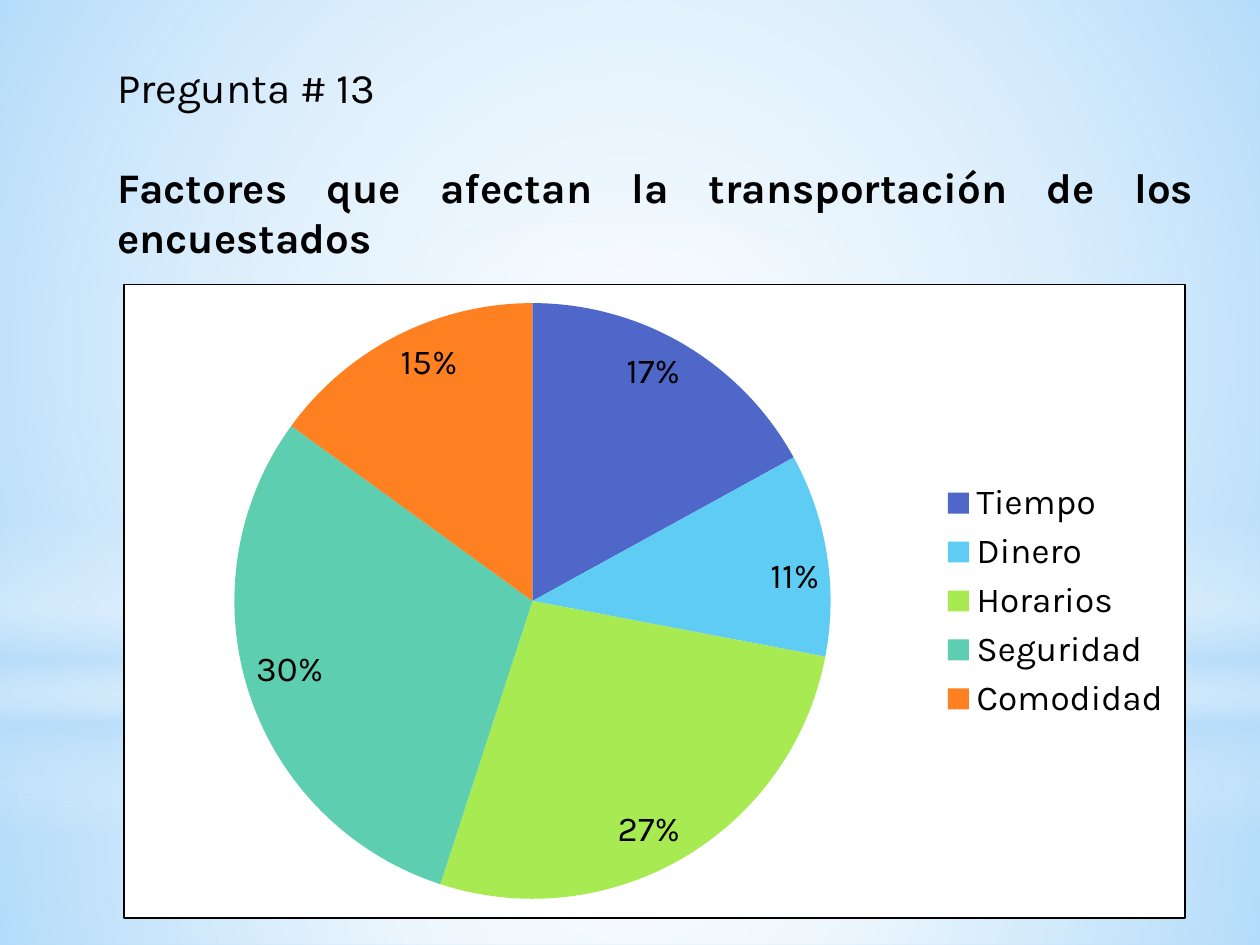
from pptx import Presentation
from pptx.chart.data import CategoryChartData
from pptx.dml.color import RGBColor
from pptx.enum.chart import XL_CHART_TYPE, XL_LABEL_POSITION, XL_LEGEND_POSITION
from pptx.enum.shapes import MSO_SHAPE
from pptx.enum.text import MSO_ANCHOR, PP_ALIGN
from pptx.oxml import parse_xml
from pptx.oxml.ns import nsdecls, qn
from pptx.util import Inches, Pt

PIE = XL_CHART_TYPE.PIE
RIGHT = XL_LEGEND_POSITION.RIGHT
INSIDE = XL_LABEL_POSITION.INSIDE_END
RECT, OVAL = MSO_SHAPE.RECTANGLE, MSO_SHAPE.OVAL
TOP, JUSTIFY = MSO_ANCHOR.TOP, PP_ALIGN.JUSTIFY

FONT, INK, PAPER, SKY = "Karla", "000000", "FFFFFF", "B4DCFA"
HEAD = [
    ("Pregunta # 13", False, 28),
    ("Factores que afectan la transportación de los encuestados", True, 0),
]
DATA = [
    ("Tiempo", 17, "4E67C8"),
    ("Dinero", 11, "5ECCF3"),
    ("Horarios", 27, "A7EA52"),
    ("Seguridad", 30, "5DCEAF"),
    ("Comodidad", 15, "FF8021"),
]
ROUND = ('<a:path path="circle"><a:fillToRect l="50000" t="50000" '
         'r="50000" b="50000"/></a:path>')
DOWN = '<a:lin ang="5400000" scaled="0"/>'
GLOWS = [
    (RECT, (0, 5.58, 10, 1.92), ROUND,
     [(0, PAPER, 91), (37, PAPER, 76), (100, SKY, 79)]),
    (RECT, (0, 0, 10, 5.58), ROUND,
     [(0, PAPER, 89), (48, PAPER, 62), (100, SKY, 79)]),
    (RECT, (0, 4.12, 10, 2.5), DOWN,
     [(0, PAPER, 0), (29, PAPER, 30), (45, SKY, 40),
      (55, PAPER, 26), (65, SKY, 60), (100, PAPER, 0)]),
    (OVAL, (0, 1.75, 10, 5.58), ROUND, [(0, PAPER, 100), (56, PAPER, 0)]),
]
CHART = (0.98, 2.25, 8.43, 5.04)
PLOT = {"x": 0.1, "y": 0.03, "w": 0.57, "h": 0.94}
TITLE = {"left": 0.83, "top": 0.44, "width": 8.74, "height": 1.72}


def paint(fill, color):
    fill.solid()
    fill.fore_color.rgb = RGBColor.from_string(color)


def style(font, size, bold=False):
    for key, val in {"name": FONT, "size": Pt(size), "bold": bold}.items():
        setattr(font, key, val)
    font.color.rgb = RGBColor.from_string(INK)


def add_glow(slide, kind, box, way, stops):
    shape = slide.shapes.add_shape(kind, *map(Inches, box))
    shape.shadow.inherit = False
    shape.line.fill.background()
    shape.fill.background()
    marks = "".join(
        f'<a:gs pos="{pos * 1000}"><a:srgbClr val="{color}">'
        f'<a:alpha val="{alpha * 1000}"/></a:srgbClr></a:gs>'
        for pos, color, alpha in stops)
    grad = parse_xml(f'<a:gradFill {nsdecls("a")} rotWithShape="1">'
                     f'<a:gsLst>{marks}</a:gsLst>{way}</a:gradFill>')
    props = shape._element.spPr
    props.replace(props.find(qn("a:noFill")), grad)


def frame(chart):
    root = chart._chartSpace
    root.find(qn("c:chart")).addnext(parse_xml(
        f'<c:spPr {nsdecls("c", "a")}>'
        f'<a:solidFill><a:srgbClr val="{PAPER}"/></a:solidFill>'
        f'<a:ln w="9525"><a:solidFill><a:srgbClr val="{INK}"/></a:solidFill>'
        '</a:ln></c:spPr>'))
    area = root.find(".//" + qn("c:plotArea"))
    for old in area.findall(qn("c:layout")):
        area.remove(old)
    spots = "".join(f'<c:{key}Mode val="edge"/>' for key in "xy")
    spots += "".join(f'<c:{key} val="{val}"/>' for key, val in PLOT.items())
    area.insert(0, parse_xml(
        f'<c:layout {nsdecls("c")}><c:manualLayout>'
        f'<c:layoutTarget val="inner"/>{spots}</c:manualLayout></c:layout>'))


def add_pie(slide):
    names, vals, colors = zip(*DATA)
    data = CategoryChartData()
    data.categories = names
    data.add_series("Series 1", vals)
    chart = slide.shapes.add_chart(PIE, *map(Inches, CHART), data).chart
    style(chart.font, 10)
    chart.has_title = False
    chart.has_legend = True
    chart.legend.position = RIGHT
    chart.legend.include_in_layout = False
    style(chart.legend.font, 20)
    plot = chart.plots[0]
    plot.vary_by_categories = True
    for i, color in enumerate(colors):
        paint(plot.series[0].points[i].format.fill, color)
    plot.has_data_labels = True
    form = {"show_percentage": True, "show_value": False,
            "number_format": "0%", "number_format_is_linked": False,
            "position": INSIDE}
    for key, val in form.items():
        setattr(plot.data_labels, key, val)
    style(plot.data_labels.font, 20)
    frame(chart)


def set_title(slide):
    title = slide.shapes.title
    for key, val in TITLE.items():
        setattr(title, key, Inches(val))
    box = title.text_frame
    box.word_wrap = True
    box.vertical_anchor = TOP
    for i, (text, bold, gap) in enumerate(HEAD):
        para = box.add_paragraph() if i else box.paragraphs[0]
        para.alignment = JUSTIFY
        para.space_after = Pt(gap)
        run = para.add_run()
        run.text = text
        style(run.font, 24, bold)
    slide.shapes._spTree.append(title._element)


def main():
    deck = Presentation()
    deck.slide_width, deck.slide_height = Inches(10), Inches(7.5)
    slide = deck.slides.add_slide(deck.slide_layouts[5])
    paint(slide.background.fill, SKY)
    for glow in GLOWS:
        add_glow(slide, *glow)
    add_pie(slide)
    set_title(slide)
    deck.save("out.pptx")


if __name__ == "__main__":
    main()
